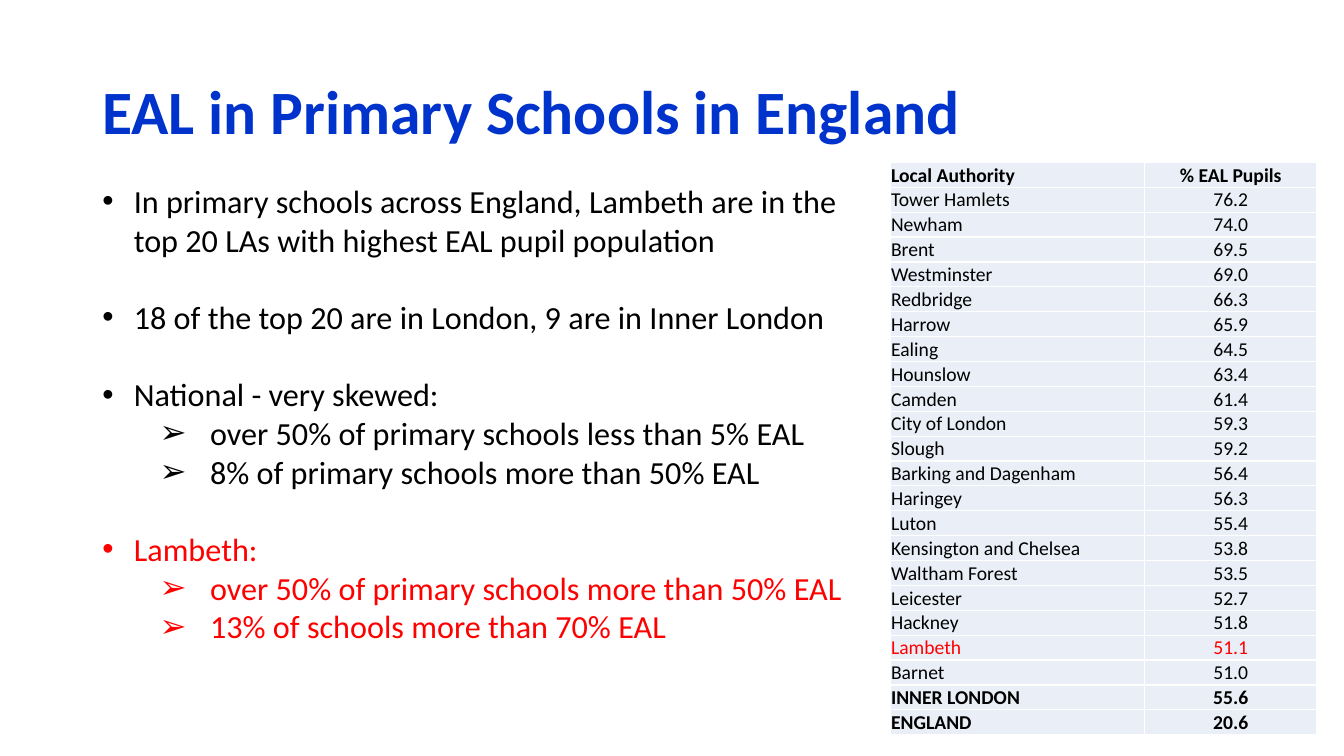
from dataclasses import dataclass

from pptx import Presentation
from pptx.dml.color import RGBColor
from pptx.enum.text import MSO_ANCHOR, PP_ALIGN
from pptx.oxml import parse_xml
from pptx.oxml.ns import nsdecls
from pptx.util import Pt

LEFT, CENTER = PP_ALIGN.LEFT, PP_ALIGN.CENTER
TOP, MIDDLE, BOTTOM = MSO_ANCHOR.TOP, MSO_ANCHOR.MIDDLE, MSO_ANCHOR.BOTTOM


@dataclass(frozen=True)
class Theme:
    font: str = "Calibri"
    title: str = "0033CC"
    text: str = "000000"
    accent: str = "FF0000"
    cell: str = "EAEFF7"
    border: str = "FFFFFF"
    title_size: float = 44
    body_size: float = 23
    table_size: float = 14
    body_line: float = 27.6


THEME = Theme()
LEVELS = [("•", 22.5, -22.5), ("➢", 77, -36)]

POINTS = [
    (0, "In primary schools across England, Lambeth are in the top 20 LAs "
        "with highest EAL pupil population", THEME.text),
    (0, "18 of the top 20 are in London, 9 are in Inner London", THEME.text),
    (0, "National - very skewed:", THEME.text),
    (1, "over 50% of primary schools less than 5% EAL", THEME.text),
    (1, "8% of primary schools more than 50% EAL", THEME.text),
    (0, "Lambeth:", THEME.accent),
    (1, "over 50% of primary schools more than 50% EAL", THEME.accent),
    (1, "13% of schools more than 70% EAL", THEME.accent),
]

AUTHORITIES = [
    ("Local Authority", "% EAL Pupils"),
    ("Tower Hamlets", "76.2"),
    ("Newham", "74.0"),
    ("Brent", "69.5"),
    ("Westminster", "69.0"),
    ("Redbridge", "66.3"),
    ("Harrow", "65.9"),
    ("Ealing", "64.5"),
    ("Hounslow", "63.4"),
    ("Camden", "61.4"),
    ("City of London", "59.3"),
    ("Slough", "59.2"),
    ("Barking and Dagenham", "56.4"),
    ("Haringey", "56.3"),
    ("Luton", "55.4"),
    ("Kensington and Chelsea", "53.8"),
    ("Waltham Forest", "53.5"),
    ("Leicester", "52.7"),
    ("Hackney", "51.8"),
    ("Lambeth", "51.1"),
    ("Barnet", "51.0"),
    ("INNER LONDON", "55.6"),
    ("ENGLAND", "20.6"),
]
BOLD_ROWS = {"Local Authority", "INNER LONDON", "ENGLAND"}


def add_run(p, text, size, color, bold=False):
    r = p.add_run()
    r.text = text
    r.font.name = THEME.font
    r.font.size = Pt(size)
    r.font.bold = bold
    r.font.color.rgb = RGBColor.from_string(color)


def add_text_box(s, left, top, width, height, anchor):
    sp = s.shapes.add_textbox(Pt(left), Pt(top), Pt(width), Pt(height))
    tf = sp.text_frame
    tf.word_wrap = True
    tf.vertical_anchor = anchor
    return tf


def add_title(s, text):
    tf = add_text_box(s, 66, 28.8, 828, 105.8, MIDDLE)
    p = tf.paragraphs[0]
    p.line_spacing = 0.9
    add_run(p, text, THEME.title_size, THEME.title, True)


def set_bullet(p, level):
    char, margin, indent = LEVELS[level]
    pPr = p._p.get_or_add_pPr()
    pPr.set("marL", str(Pt(margin)))
    pPr.set("indent", str(Pt(indent)))
    pPr.append(parse_xml(f'<a:buFont {nsdecls("a")} typeface="Arial"/>'))
    pPr.append(parse_xml(f'<a:buChar {nsdecls("a")} char="{char}"/>'))


def add_bullets(s, points):
    tf = add_text_box(s, 66, 126, 553.7, 342, TOP)
    for i, (level, text, color) in enumerate(points):
        p = tf.add_paragraph() if i else tf.paragraphs[0]
        p.line_spacing = Pt(THEME.body_line)
        p.space_before = Pt(THEME.body_line if i and level == 0 else 0)
        set_bullet(p, level)
        add_run(p, text, THEME.body_size, color)


def set_borders(cell):
    tcPr = cell._tc.get_or_add_tcPr()
    for side in ("lnL", "lnR", "lnT", "lnB"):
        tcPr.append(parse_xml(
            f'<a:{side} {nsdecls("a")} w="{Pt(1)}"><a:solidFill>'
            f'<a:srgbClr val="{THEME.border}"/></a:solidFill></a:{side}>'))


def fill_cell(cell, text, align, color, bold):
    set_borders(cell)
    cell.fill.solid()
    cell.fill.fore_color.rgb = RGBColor.from_string(THEME.cell)
    cell.margin_left = cell.margin_right = cell.margin_top = Pt(0.7)
    cell.margin_bottom = 0
    cell.vertical_anchor = BOTTOM
    p = cell.text_frame.paragraphs[0]
    p.alignment = align
    add_run(p, text, THEME.table_size, color, bold)


def add_authority_table(s, rows):
    widths = (181.8, 123)
    row_height = 17.78
    table = s.shapes.add_table(
        len(rows), len(widths), Pt(635.8), Pt(116),
        Pt(sum(widths)), Pt(row_height * len(rows))).table
    for column, width in zip(table.columns, widths):
        column.width = Pt(width)
    for i, row in enumerate(rows):
        table.rows[i].height = Pt(row_height)
        color = THEME.accent if row[0] == "Lambeth" else THEME.text
        for j, (text, align) in enumerate(zip(row, (LEFT, CENTER))):
            fill_cell(table.cell(i, j), text, align, color, row[0] in BOLD_ROWS)


def main():
    prs = Presentation()
    prs.slide_width, prs.slide_height = Pt(960), Pt(540)
    s = prs.slides.add_slide(prs.slide_layouts[6])
    add_title(s, "EAL in Primary Schools in England")
    add_authority_table(s, AUTHORITIES)
    add_bullets(s, POINTS)
    prs.save("out.pptx")


if __name__ == "__main__":
    main()
